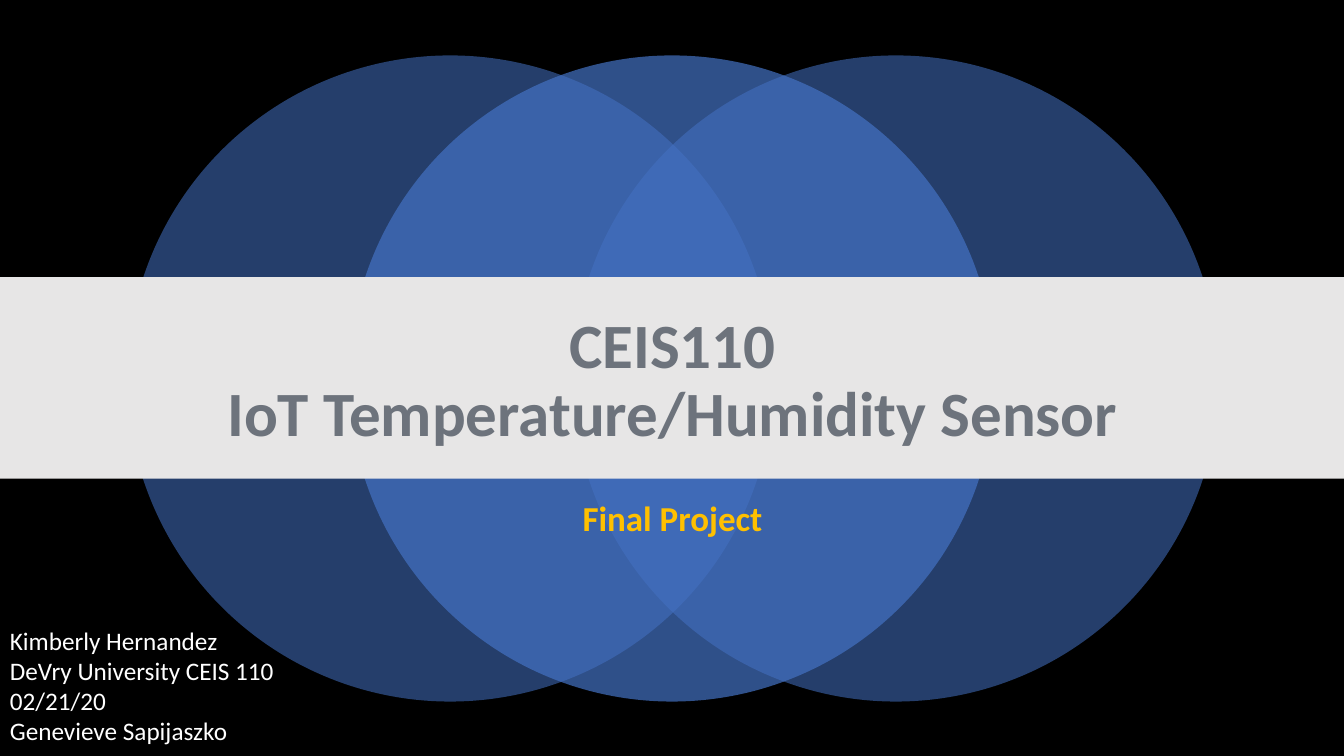
"""Build the title slide of the sensor project: three overlapping circles, a band and text."""
from dataclasses import dataclass

from lxml import etree
from pptx import Presentation
from pptx.dml import color
from pptx.enum import shapes, text
from pptx.oxml import ns
from pptx import util as u

FONT = "Calibri"
CIRCLE_TOP, CIRCLE_SIZE = 0.55, 6.41


@dataclass
class Circle:
    left: float
    opacity: int


@dataclass
class TextStyle:
    size: int
    colour: str
    bold: bool = False
    align: text.PP_ALIGN = text.PP_ALIGN.LEFT
    line_spacing: float = 1.0
    anchor: text.MSO_ANCHOR = text.MSO_ANCHOR.TOP


CIRCLES = [Circle(1.26, 55), Circle(5.68, 55), Circle(3.46, 70)]
TITLE = TextStyle(45, "6D737C", True, text.PP_ALIGN.CENTER, 0.9, text.MSO_ANCHOR.MIDDLE)
SUBTITLE = TextStyle(25, "FFC000", True, text.PP_ALIGN.CENTER, 0.9)
DETAILS = TextStyle(18, "FFFFFF")


def set_solid(fill, colour: str) -> None:
    fill.solid()
    fill.fore_color.rgb = color.RGBColor.from_string(colour)


def add_filled(slide, preset, left: float, top: float, width: float, height: float,
               colour: str, opacity: int = 100):
    shape = slide.shapes.add_shape(
        preset, u.Inches(left), u.Inches(top), u.Inches(width), u.Inches(height))
    shape.shadow.inherit = False
    shape.line.fill.background()
    set_solid(shape.fill, colour)
    if opacity < 100:
        tint = shape.element.spPr.find(".//" + ns.qn("a:srgbClr"))
        etree.SubElement(tint, ns.qn("a:alpha")).set("val", str(opacity * 1000))
    return shape


def write_text(box, paragraphs: list[list[str]], style: TextStyle) -> None:
    frame = box.text_frame
    frame.word_wrap = True
    frame.auto_size = text.MSO_AUTO_SIZE.NONE
    frame.vertical_anchor = style.anchor
    for index, lines in enumerate(paragraphs):
        para = frame.add_paragraph() if index else frame.paragraphs[0]
        para.alignment = style.align
        para.line_spacing = style.line_spacing
        for number, line in enumerate(lines):
            if number:
                para.add_line_break()
            span = para.add_run()
            span.text = line
            span.font.name = FONT
            span.font.size = u.Pt(style.size)
            span.font.bold = style.bold
            span.font.color.rgb = color.RGBColor.from_string(style.colour)


def add_text(slide, left: float, top: float, width: float, height: float,
             paragraphs: list[list[str]], style: TextStyle) -> None:
    box = slide.shapes.add_textbox(
        u.Inches(left), u.Inches(top), u.Inches(width), u.Inches(height))
    write_text(box, paragraphs, style)


def main() -> None:
    deck = Presentation()
    deck.slide_width, deck.slide_height = u.Inches(13.33), u.Inches(7.5)
    page = deck.slides.add_slide(deck.slide_layouts.get_by_name("Title Only"))
    set_solid(page.background.fill, "000000")

    for circle in CIRCLES:
        add_filled(page, shapes.MSO_SHAPE.OVAL, circle.left, CIRCLE_TOP,
                   CIRCLE_SIZE, CIRCLE_SIZE, "4472C4", circle.opacity)
    band = add_filled(page, shapes.MSO_SHAPE.RECTANGLE, 0, 2.75, 13.33, 2, "E7E6E6")

    title = page.shapes.title
    title.left, title.top = u.Inches(1.67), u.Inches(3.04)
    title.width, title.height = u.Inches(10), u.Inches(1.51)
    write_text(title, [["CEIS110", "IoT Temperature/Humidity Sensor"]], TITLE)
    band.element.addnext(title.element)

    add_text(page, 1.67, 4.92, 10, 0.83, [["Final Project"]], SUBTITLE)
    add_text(page, 0, 6.15, 3.46, 1.62,
             [["Kimberly Hernandez"], ["DeVry University CEIS 110"],
              ["02/21/20"], ["Genevieve Sapijaszko"]], DETAILS)
    deck.save("out.pptx")


if __name__ == "__main__":
    main()
